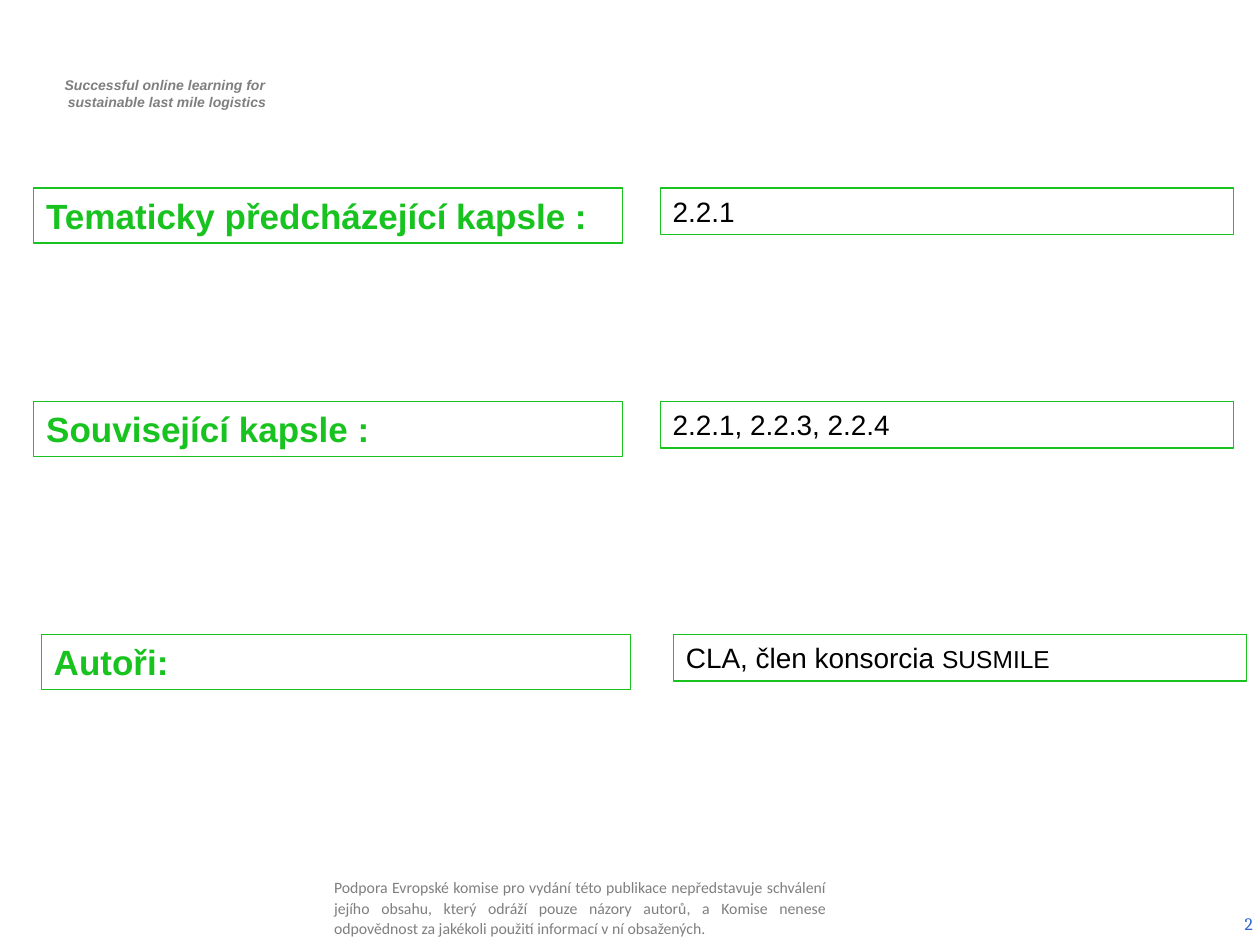
from dataclasses import dataclass

from pptx import Presentation
from pptx.dml.color import RGBColor
from pptx.enum.shapes import MSO_SHAPE
from pptx.enum.text import MSO_ANCHOR, PP_ALIGN
from pptx.util import Pt

RECT = MSO_SHAPE.RECTANGLE
TOP, MIDDLE = MSO_ANCHOR.TOP, MSO_ANCHOR.MIDDLE
LEFT, CENTER = PP_ALIGN.LEFT, PP_ALIGN.CENTER
RIGHT, JUSTIFY = PP_ALIGN.RIGHT, PP_ALIGN.JUSTIFY


@dataclass(frozen=True)
class Theme:
    green: str = "18C320"
    white: str = "FFFFFF"
    black: str = "000000"
    grey: str = "7F7F7F"
    blue: str = "3366CC"
    body: str = "Arial"
    note: str = "Calibri"
    number: str = "Cambria"
    label_size: float = 20
    value_size: float = 16
    small_value_size: float = 14
    header_size: float = 8
    note_size: float = 9
    number_size: float = 10
    border: float = 0.75


class SlideBuilder:
    def __init__(self, slide, theme):
        self.s = slide
        self.theme = theme

    def fill_text(self, shape, paragraphs, font, para=None, anchor=TOP,
                  inset=(7.2, 3.6)):
        """Fill a shape with paragraphs, each a list of (text, size) runs."""
        tf = shape.text_frame
        side, edge = Pt(inset[0]), Pt(inset[1])
        frame = dict(word_wrap=True, vertical_anchor=anchor, margin_left=side,
                     margin_right=side, margin_top=edge, margin_bottom=edge)
        for name, value in frame.items():
            setattr(tf, name, value)
        for i, runs in enumerate(paragraphs):
            p = tf.add_paragraph() if i else tf.paragraphs[0]
            for name, value in (para or {"alignment": LEFT}).items():
                setattr(p, name, value)
            for text, size in runs:
                r = p.add_run()
                r.text = text
                r.font.size = Pt(size)
                for name, value in font.items():
                    if name == "color":
                        r.font.color.rgb = RGBColor.from_string(value)
                    else:
                        setattr(r.font, name, value)

    def text(self, x, y, w, h, paragraphs, font, **style):
        sp = self.s.shapes.add_textbox(Pt(x), Pt(y), Pt(w), Pt(h))
        self.fill_text(sp, paragraphs, font, **style)
        return sp

    def box(self, x, y, w, h, runs, font):
        t = self.theme
        sp = self.s.shapes.add_shape(RECT, Pt(x), Pt(y), Pt(w), Pt(h))
        sp.shadow.inherit = False
        sp.fill.solid()
        sp.fill.fore_color.rgb = RGBColor.from_string(t.white)
        sp.line.color.rgb = RGBColor.from_string(t.green)
        sp.line.width = Pt(t.border)
        self.fill_text(sp, [runs], font)

    def row(self, y, label_x, label, value_x, value):
        t = self.theme
        self.box(label_x, y, 336.5, 31.5, [(label, t.label_size)],
                 {"name": t.body, "color": t.green, "bold": True})
        self.box(value_x, y, 327.5, 26.6, value,
                 {"name": t.body, "color": t.black})


def main():
    t = Theme()
    prs = Presentation()
    prs.slide_width, prs.slide_height = Pt(720), Pt(540)
    blank = prs.slide_layouts[6]
    b = SlideBuilder(prs.slides.add_slide(blank), t)

    # Project header
    header = b.text(
        21, 40.3, 146, 26.6,
        [[("Successful online learning for ", t.header_size)],
         [("sustainable last mile logistics", t.header_size)]],
        {"name": t.body, "color": t.grey, "bold": True, "italic": True},
        para={"alignment": CENTER})
    for p in header.text_frame.paragraphs:
        p._p.get_or_add_pPr().set("marL", str(Pt(2.9)))

    # Disclaimer
    b.text(
        188, 500.4, 286.5, 36,
        [[("Podpora Evropské komise pro vydání této publikace nepředstavuje "
           "schválení jejího obsahu, který odráží pouze názory autorů, a "
           "Komise nenese odpovědnost za jakékoli použití informací v ní "
           "obsažených.", t.note_size)]],
        {"name": t.note, "color": t.grey},
        para={"alignment": JUSTIFY, "line_spacing": 1.07,
              "space_after": Pt(6)},
        anchor=MIDDLE, inset=(2.9, 2.9))

    # Slide number
    b.text(555, 513.4, 168, 28.8, [[("2", t.number_size)]],
           {"name": t.number, "color": t.blue},
           para={"alignment": RIGHT}, anchor=MIDDLE)

    # Label and value rows
    rows = [
        (107.4, 19.3, "Tematicky předcházející kapsle :", 377.3,
         [("2.2.1", t.value_size)]),
        (229.5, 19.3, "Související kapsle :", 377.3,
         [("2.2.1, 2.2.3, 2.2.4", t.value_size)]),
        (362.6, 23.6, "Autoři:", 384.9,
         [("CLA, člen konsorcia ", t.value_size),
          ("SUSMILE", t.small_value_size)]),
    ]
    for row in rows:
        b.row(*row)

    prs.save("out.pptx")


if __name__ == "__main__":
    main()
